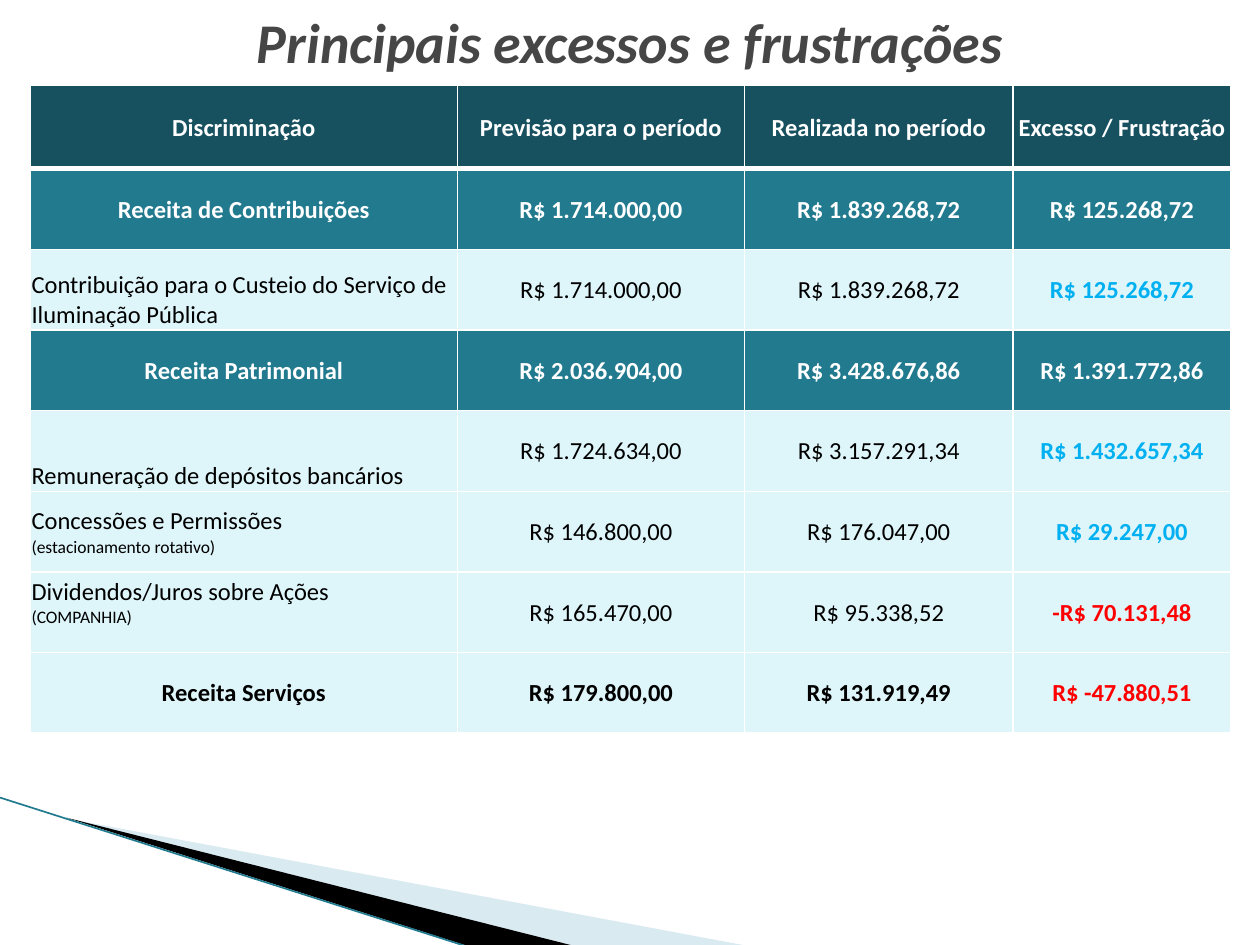
from lxml import etree
from pptx import Presentation
from pptx.dml.color import RGBColor
from pptx.enum.shapes import MSO_CONNECTOR
from pptx.enum.text import MSO_ANCHOR, MSO_AUTO_SIZE, PP_ALIGN
from pptx.oxml.ns import qn
from pptx.util import Inches, Pt

STRAIGHT = MSO_CONNECTOR.STRAIGHT
TOP, MIDDLE, BOTTOM = MSO_ANCHOR.TOP, MSO_ANCHOR.MIDDLE, MSO_ANCHOR.BOTTOM
LEFT, CENTER = PP_ALIGN.LEFT, PP_ALIGN.CENTER
NO_FIT = MSO_AUTO_SIZE.NONE

WHITE = RGBColor(0xFF, 0xFF, 0xFF)
BLACK = RGBColor(0, 0, 0)
GRAY = RGBColor(0x46, 0x46, 0x46)
DARK_TEAL = RGBColor(0x17, 0x51, 0x60)
TEAL = RGBColor(0x22, 0x7A, 0x8F)
PALE = RGBColor(0xDE, 0xF5, 0xFA)
SKY = RGBColor(0xA0, 0xCB, 0xDC)
BLUE = RGBColor(0x00, 0xB0, 0xF0)
RED = RGBColor(0xFF, 0, 0)

FONT = "Calibri"
COLUMN_WIDTHS = (3.39, 2.28, 2.13, 1.73)
HEADER_HEIGHT, ROW_HEIGHT = 0.66, 0.64

HEADER = {"fill": DARK_TEAL, "color": WHITE, "bold": True, "align": CENTER, "last": WHITE}
GROUP = {**HEADER, "fill": TEAL}
ITEM = {"fill": PALE, "color": BLACK, "bold": False, "align": LEFT, "last": BLUE}
LOSS = {**ITEM, "last": RED}
TOTAL = {**LOSS, "bold": True, "align": CENTER}

ROWS = (
    (HEADER, MIDDLE, ("Discriminação", "Previsão para o período",
                      "Realizada no período", "Excesso / Frustração")),
    (GROUP, MIDDLE, ("Receita de Contribuições", "R$ 1.714.000,00",
                     "R$ 1.839.268,72", "R$ 125.268,72")),
    (ITEM, BOTTOM, ("Contribuição para o Custeio do Serviço de Iluminação Pública",
                    "R$ 1.714.000,00", "R$ 1.839.268,72", "R$ 125.268,72")),
    (GROUP, MIDDLE, ("Receita Patrimonial", "R$ 2.036.904,00",
                     "R$ 3.428.676,86", "R$ 1.391.772,86")),
    (ITEM, BOTTOM, ("Remuneração de depósitos bancários", "R$ 1.724.634,00",
                    "R$ 3.157.291,34", "R$ 1.432.657,34")),
    (ITEM, MIDDLE, ("Concessões e Permissões\n(estacionamento rotativo)",
                    "R$ 146.800,00", "R$ 176.047,00", "R$ 29.247,00")),
    (LOSS, TOP, ("Dividendos/Juros sobre Ações\n(COMPANHIA)",
                 "R$ 165.470,00", "R$ 95.338,52", "-R$ 70.131,48")),
    (TOTAL, MIDDLE, ("Receita Serviços", "R$ 179.800,00",
                     "R$ 131.919,49", "R$ -47.880,51")),
)


def apply_format(target, values):
    for name, value in values.items():
        setattr(target, name, value)


def format_font(font, color, **values):
    apply_format(font, {"name": FONT, **values})
    font.color.rgb = color


def add_title(page, left, top, width, height):
    title = page.shapes.title
    apply_format(title, {"left": left, "top": top, "width": width, "height": height})
    frame = title.text_frame
    apply_format(frame, {"auto_size": NO_FIT, "vertical_anchor": MIDDLE, "word_wrap": True})
    para = frame.paragraphs[0]
    para.alignment = CENTER
    span = para.add_run()
    span.text = "Principais excessos e frustrações"
    format_font(span.font, GRAY, size=Pt(32), bold=True, italic=True)


def set_borders(cell, widths):
    properties = cell._tc.get_or_add_tcPr()
    for side, width in widths.items():
        line = etree.SubElement(properties, qn(f"a:ln{side}"), w=str(Pt(width)))
        fill = etree.SubElement(line, qn("a:solidFill"))
        etree.SubElement(fill, qn("a:srgbClr"), val=str(WHITE))


def fill_cell(cell, text, style, color, bold, align, anchor):
    inset = Inches(0.01)
    apply_format(cell, {
        "margin_left": inset, "margin_right": inset, "margin_bottom": 0,
        "margin_top": Inches(0.04) if anchor == TOP else inset,
        "vertical_anchor": anchor,
    })
    cell.fill.solid()
    cell.fill.fore_color.rgb = style["fill"]
    cell.text = text
    for index, para in enumerate(cell.text_frame.paragraphs):
        para.alignment = align
        format_font(para.runs[0].font, color, size=Pt(10 if index else 14), bold=bold)


def add_revenue_table(page, left, top):
    height = HEADER_HEIGHT + ROW_HEIGHT * (len(ROWS) - 1)
    table = page.shapes.add_table(len(ROWS), len(COLUMN_WIDTHS), left, top,
                                  Inches(sum(COLUMN_WIDTHS)), Inches(height)).table
    for column, width in zip(table.columns, COLUMN_WIDTHS):
        column.width = Inches(width)
    last_column = len(COLUMN_WIDTHS) - 1
    for row_index, (style, label_anchor, texts) in enumerate(ROWS):
        table.rows[row_index].height = Inches(ROW_HEIGHT if row_index else HEADER_HEIGHT)
        widths = {"L": 1, "R": 1, "T": 3 if row_index == 1 else 1, "B": 1 if row_index else 3}
        for column_index, text in enumerate(texts):
            cell = table.cell(row_index, column_index)
            is_label, is_last = column_index == 0, column_index == last_column
            set_borders(cell, widths)
            fill_cell(cell, text, style,
                      color=style["last"] if is_last else style["color"],
                      bold=style["bold"] or is_last,
                      align=style["align"] if is_label else CENTER,
                      anchor=label_anchor if is_label else MIDDLE)


def add_wedge(page, left, top, points, color, opacity):
    corners = [(left + Inches(x), top + Inches(y)) for x, y in points]
    builder = page.shapes.build_freeform(*corners[0])
    builder.add_line_segments(corners[1:])
    wedge = builder.convert_to_shape()
    wedge.shadow.inherit = False
    wedge.fill.solid()
    wedge.fill.fore_color.rgb = color
    wedge.line.fill.background()
    tint = wedge.fill._xPr.find(f".//{qn('a:srgbClr')}")
    etree.SubElement(tint, qn("a:alpha"), val=str(opacity * 1000))


def add_corner_decoration(page, left, top, width, height):
    add_wedge(page, left, top, ((0.55, 0.17), (5.95, 1.18), (4.56, 1.18)), SKY, 40)
    add_wedge(page, left, top, ((0.53, 0.16), (4.57, 1.18), (3.72, 1.18)), BLACK, 100)
    edge = page.shapes.add_connector(STRAIGHT, left, top, left + width, top + height)
    edge.line.color.rgb = TEAL
    edge.line.width = Pt(0.95)
    etree.SubElement(edge._element.spPr, qn("a:effectLst"))


def main():
    deck = Presentation()
    apply_format(deck, {"slide_width": Inches(10), "slide_height": Inches(7.5)})
    page = deck.slides.add_slide(deck.slide_layouts[5])
    add_corner_decoration(page, Inches(0), Inches(6.33), Inches(3.7), Inches(1.18))
    add_title(page, Inches(0.5), Inches(0.14), Inches(9), Inches(0.38))
    add_revenue_table(page, Inches(0.24), Inches(0.68))
    deck.save("out.pptx")


if __name__ == "__main__":
    main()
